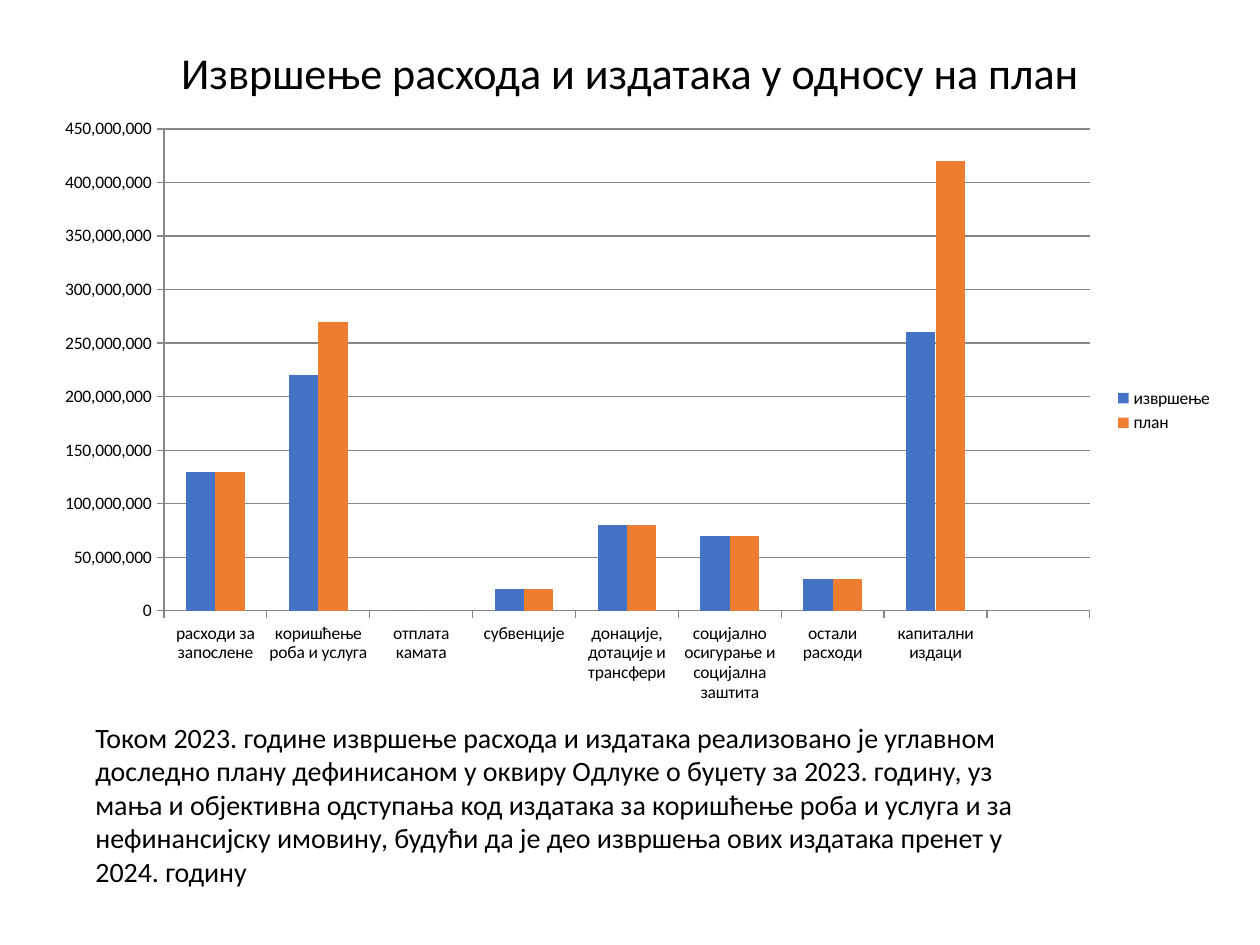
from dataclasses import dataclass

import pptx
import pptx.chart.data
import pptx.dml.color
import pptx.enum.chart
import pptx.enum.text
import pptx.oxml
import pptx.oxml.ns
import pptx.util

EMU_PER_PX = 914400 / 126
MILLION = 1_000_000
FONT = "Calibri"
COLORS = {"text": "000000", "actual": "4472C4", "plan": "ED7D31", "grid": "868686"}


@dataclass(frozen=True)
class Box:
    left: int
    top: int
    width: int
    height: int


@dataclass(frozen=True)
class Series:
    name: str
    color: str
    millions: tuple


TITLE_BOX = Box(38, 42, 1184, 63)
CHART_BOX = Box(42, 107, 1184, 607)
PLOT_BOX = Box(164, 129, 926, 482)
COMMENT_BOX = Box(83, 714, 1076, 183)

CATEGORIES = (
    "расходи за запослене",
    "коришћење роба и услуга",
    "отплата камата",
    "субвенције",
    "донације, дотације и трансфери",
    "социјално осигурање и социјална заштита",
    "остали расходи",
    "капитални издаци",
    "",
)
SERIES = (
    Series("извршење", "actual", (130, 220, 0, 20, 80, 70, 30, 260, None)),
    Series("план", "plan", (130, 270, 0, 20, 80, 70, 30, 420, None)),
)
COMMENT_LINES = (
    "Током 2023. године извршење расхода и издатака реализовано је углавном",
    "доследно плану дефинисаном у оквиру Oдлуке о буџету за 2023. годину, уз",
    "мања и објективна одступања код издатака за коришћење роба и услуга и за",
    "нефинансијску имовину, будући да је део извршења ових издатака пренет у",
    "2024. годину",
)


def px(length: int) -> int:
    return round(length * EMU_PER_PX)


def place(box: Box) -> tuple:
    return px(box.left), px(box.top), px(box.width), px(box.height)


def rgb(key: str) -> pptx.dml.color.RGBColor:
    return pptx.dml.color.RGBColor.from_string(COLORS[key])


def apply_format(target, values: dict) -> None:
    for name, value in values.items():
        setattr(target, name, value)


def format_font(font, size: float) -> None:
    apply_format(font, {"name": FONT, "size": pptx.util.Pt(size), "bold": False})
    font.color.rgb = rgb("text")


def add_title(slide) -> None:
    title = slide.shapes.title
    apply_format(title, dict(zip(("left", "top", "width", "height"), place(TITLE_BOX))))
    frame = title.text_frame
    apply_format(frame, {
        "text": "Извршење расхода и издатака у односу на план",
        "word_wrap": True,
        "auto_size": pptx.enum.text.MSO_AUTO_SIZE.NONE,
        "vertical_anchor": pptx.enum.text.MSO_ANCHOR.BOTTOM,
    })
    heading = frame.paragraphs[0]
    apply_format(heading, {
        "alignment": pptx.enum.text.PP_ALIGN.CENTER,
        "line_spacing": 0.9,
        "space_before": pptx.util.Pt(0),
    })
    format_font(heading.runs[0].font, 25.2)


def add_comment(slide) -> None:
    frame = slide.shapes.add_textbox(*place(COMMENT_BOX)).text_frame
    apply_format(frame, {
        "text": "\n".join(COMMENT_LINES),
        "word_wrap": True,
        "auto_size": pptx.enum.text.MSO_AUTO_SIZE.SHAPE_TO_FIT_TEXT,
    })
    for line in frame.paragraphs:
        format_font(line.runs[0].font, 16)


def fix_plot_area(chart) -> None:
    """Pin the inner plot area, as fractions of the chart frame."""
    fractions = {
        "x": (PLOT_BOX.left - CHART_BOX.left) / CHART_BOX.width,
        "y": (PLOT_BOX.top - CHART_BOX.top) / CHART_BOX.height,
        "w": PLOT_BOX.width / CHART_BOX.width,
        "h": PLOT_BOX.height / CHART_BOX.height,
    }
    modes = '<c:xMode val="edge"/><c:yMode val="edge"/>'
    sizes = "".join(f'<c:{key} val="{value:.4f}"/>' for key, value in fractions.items())
    layout = pptx.oxml.parse_xml(
        f'<c:layout {pptx.oxml.ns.nsdecls("c")}><c:manualLayout>'
        f'<c:layoutTarget val="inner"/>{modes}{sizes}</c:manualLayout></c:layout>'
    )
    plot_area = chart.plots[0]._element.getparent()
    for automatic in plot_area.findall(pptx.oxml.ns.qn("c:layout")):
        plot_area.remove(automatic)
    plot_area.insert(0, layout)


def add_budget_chart(slide) -> None:
    budget = pptx.chart.data.CategoryChartData(number_format="#,##0")
    budget.categories = CATEGORIES
    for series in SERIES:
        budget.add_series(
            series.name,
            [None if value is None else value * MILLION for value in series.millions],
        )
    chart = slide.shapes.add_chart(
        pptx.enum.chart.XL_CHART_TYPE.COLUMN_CLUSTERED, *place(CHART_BOX), budget
    ).chart
    apply_format(chart, {"has_title": False, "has_legend": True})
    format_font(chart.font, 10)
    apply_format(chart.legend, {
        "position": pptx.enum.chart.XL_LEGEND_POSITION.RIGHT,
        "include_in_layout": False,
    })

    # Columns
    columns = chart.plots[0]
    apply_format(columns, {"gap_width": 150, "overlap": 0, "vary_by_categories": False})
    for drawn, series in zip(columns.series, SERIES):
        drawn.format.fill.solid()
        drawn.format.fill.fore_color.rgb = rgb(series.color)

    # Axes and gridlines
    amounts = chart.value_axis
    apply_format(amounts, {
        "minimum_scale": 0,
        "maximum_scale": 450 * MILLION,
        "major_unit": 50 * MILLION,
        "has_major_gridlines": True,
    })
    apply_format(amounts.tick_labels, {
        "number_format": "#,##0",
        "number_format_is_linked": False,
    })
    for axis in (chart.category_axis, amounts):
        axis.major_tick_mark = pptx.enum.chart.XL_TICK_MARK.OUTSIDE
    for ruled in (chart.category_axis, amounts, amounts.major_gridlines):
        ruled.format.line.color.rgb = rgb("grid")
    fix_plot_area(chart)


def main() -> None:
    deck = pptx.Presentation()
    deck.slide_width, deck.slide_height = px(1260), px(945)
    slide = deck.slides.add_slide(deck.slide_layouts[5])
    add_title(slide)
    add_comment(slide)
    add_budget_chart(slide)
    deck.save("out.pptx")


if __name__ == "__main__":
    main()
